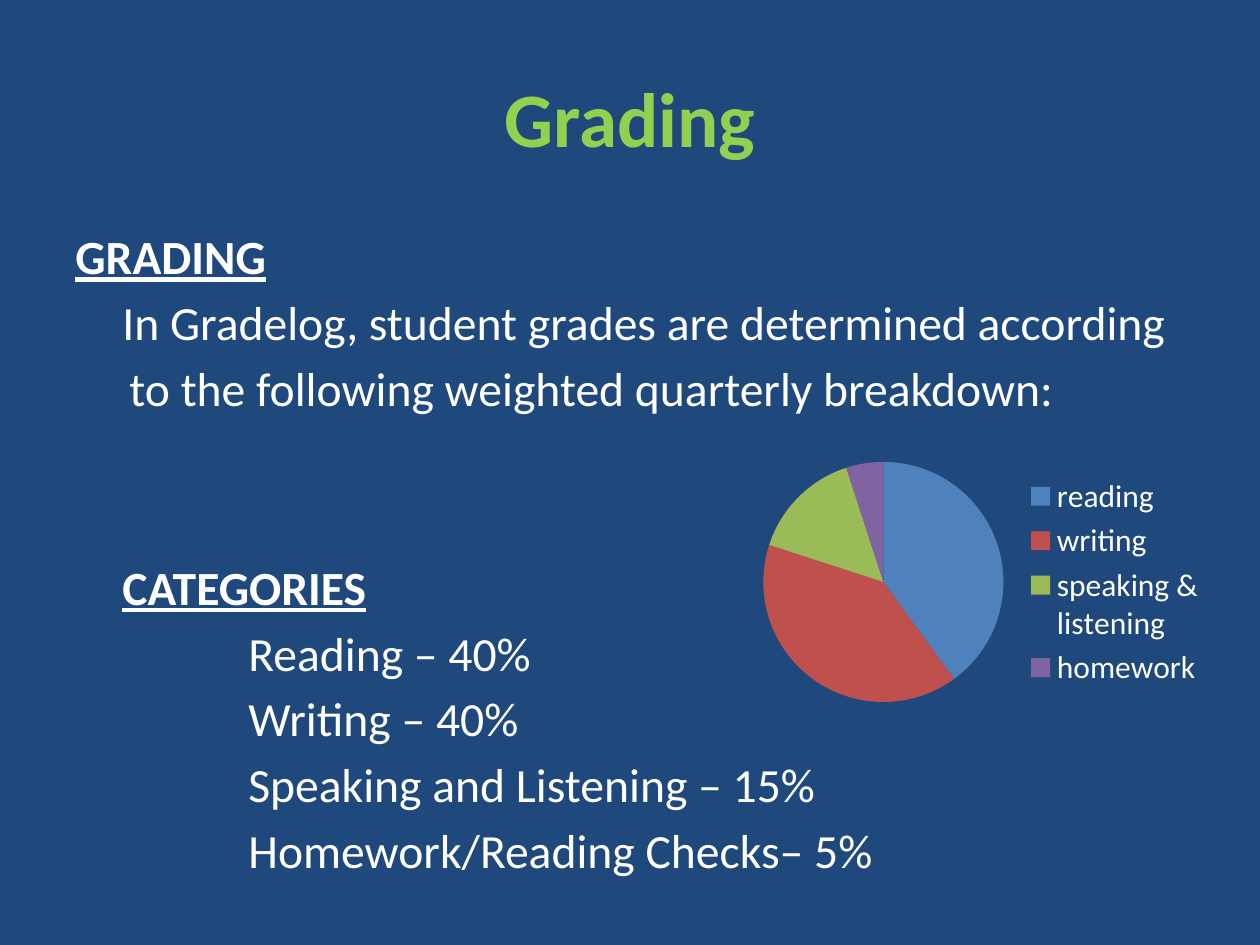
"""Build a slide on how grades are weighted, with a pie chart."""
from typing import Any, NamedTuple

from pptx import Presentation
from pptx.chart.data import CategoryChartData as Data
from pptx.dml.color import RGBColor as RGB
from pptx.enum.chart import XL_CHART_TYPE as Kind, XL_LEGEND_POSITION as Side
from pptx.enum.text import MSO_ANCHOR as Anchor, PP_ALIGN as Align
from pptx.util import Emu, Pt

NAVY = RGB(0x1F, 0x49, 0x7D)
LIME = RGB(0x92, 0xD0, 0x50)
WHITE = RGB(0xFF, 0xFF, 0xFF)
BLUE = RGB(0x4F, 0x81, 0xBD)
RED = RGB(0xC0, 0x50, 0x4D)
GREEN = RGB(0x9B, 0xBB, 0x59)
PLUM = RGB(0x80, 0x64, 0xA2)

FACE = "Calibri"
HEAD = {"bold": True, "underline": True}
GAP = 4.9
STEP = 38.1


class Box(NamedTuple):
    left: int
    top: int
    width: int
    height: int


class Line(NamedTuple):
    text: str
    inset: int = 0
    form: dict[str, Any] = {}
    before: float = GAP
    align: Align = Align.LEFT


class Slice(NamedTuple):
    name: str
    share: int
    tint: RGB


TITLE = [Line("Grading", form={"bold": True}, before=0, align=Align.CENTER)]
BODY = [
    Line("GRADING", form=HEAD, before=0),
    Line("In Gradelog, student grades are determined according", 47),
    Line("to the following weighted quarterly breakdown:", 54),
    Line("CATEGORIES", 47, HEAD, GAP + 2 * STEP),
    Line("Reading – 40%", 173),
    Line("Writing – 40%", 173),
    Line("Speaking and Listening – 15%", 173),
    Line("Homework/Reading Checks– 5%", 173),
]
SLICES = [
    Slice("reading", 40, BLUE),
    Slice("writing", 40, RED),
    Slice("speaking & listening", 15, GREEN),
    Slice("homework", 5, PLUM),
]


def px(count: int) -> Emu:
    """Turn pixels into EMU."""
    return Emu(count * 914400 // 126)


def style(font: Any, size: float, tint: RGB, form: dict[str, Any]) -> None:
    """Set the face, size, colour and further font values."""
    for key, value in {"name": FACE, "size": Pt(size), **form}.items():
        setattr(font, key, value)
    font.color.rgb = tint


def write(slide: Any, box: Box, lines: list[Line], size: float, tint: RGB,
          anchor: Anchor) -> None:
    """Add a text box with one paragraph for each line."""
    frame = slide.shapes.add_textbox(*map(px, box)).text_frame
    frame.word_wrap = True
    frame.vertical_anchor = anchor
    for spot, line in enumerate(lines):
        para = frame.add_paragraph() if spot else frame.paragraphs[0]
        para.alignment = line.align
        para.space_before = Pt(line.before)
        para._p.get_or_add_pPr().set("marL", str(px(line.inset)))
        run = para.add_run()
        run.text = line.text
        style(run.font, size, tint, line.form)


def pie(slide: Any, box: Box, slices: list[Slice]) -> None:
    """Add a pie chart with its legend on the right."""
    data = Data()
    data.categories = [part.name for part in slices]
    data.add_series("Series 1", [part.share for part in slices])
    chart = slide.shapes.add_chart(Kind.PIE, *map(px, box), data).chart
    style(chart.font, 18, WHITE, {})
    chart.has_title = False
    chart.has_legend = True
    chart.legend.position = Side.RIGHT
    chart.legend.include_in_layout = False
    plot = chart.plots[0]
    plot.vary_by_categories = True
    for spot, part in enumerate(slices):
        fill = plot.series[0].points[spot].format.fill
        fill.solid()
        fill.fore_color.rgb = part.tint


def main() -> None:
    """Draw the slide and save it."""
    deck = Presentation()
    deck.slide_width, deck.slide_height = px(1260), px(945)
    slide = deck.slides.add_slide(deck.slide_layouts[6])
    fill = slide.background.fill
    fill.solid()
    fill.fore_color.rgb = NAVY
    write(slide, Box(63, 38, 1134, 158), TITLE, 44, LIME, Anchor.MIDDLE)
    write(slide, Box(63, 221, 1166, 624), BODY, 27.2, WHITE, Anchor.TOP)
    pie(slide, Box(746, 262, 473, 640), SLICES)
    deck.save("out.pptx")


if __name__ == "__main__":
    main()
